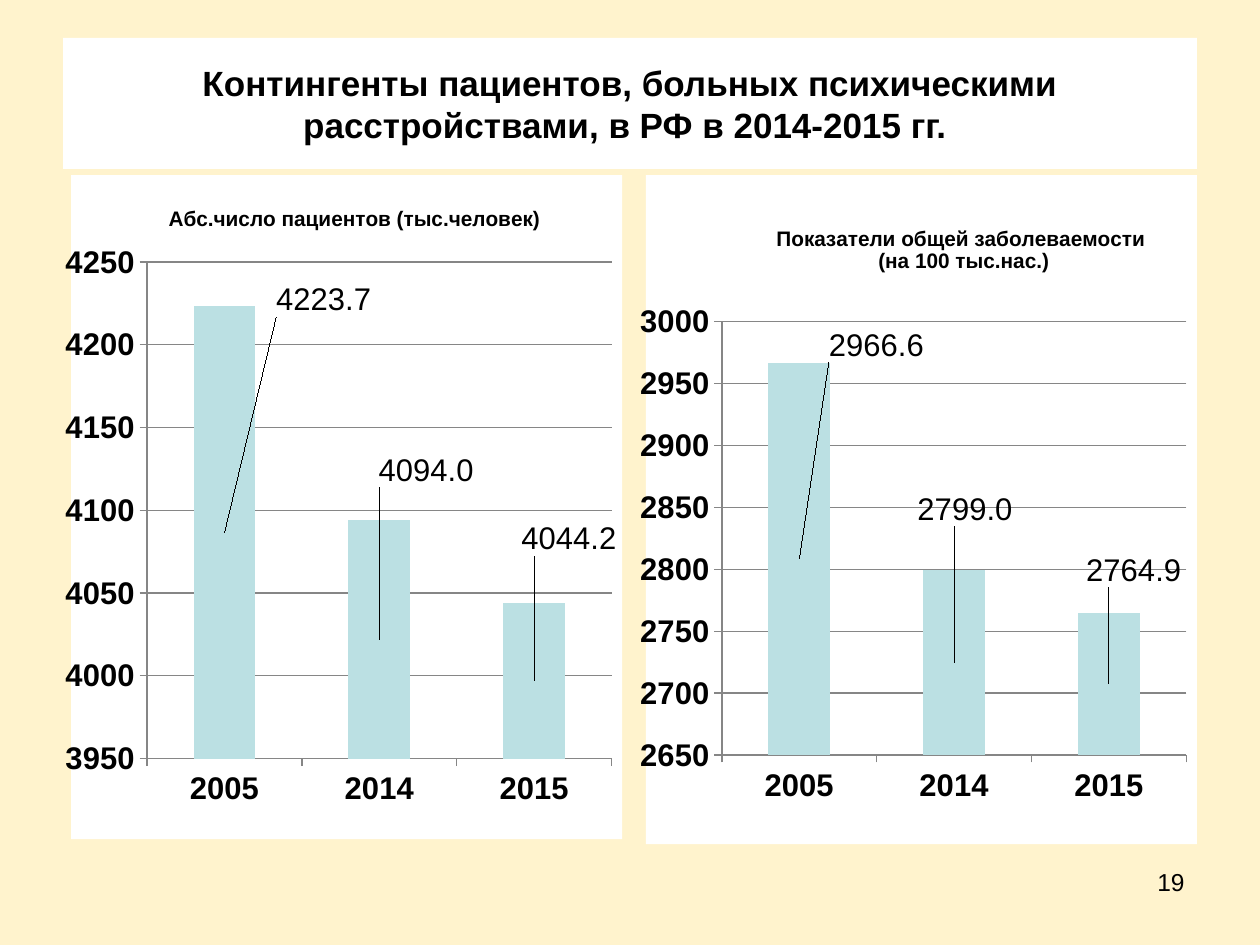
import pptx
import pptx.chart.data
import pptx.dml.color
import pptx.enum.chart
import pptx.enum.text
import pptx.oxml
import pptx.oxml.ns
import pptx.util

Pt = pptx.util.Pt
CREAM = pptx.dml.color.RGBColor(0xFF, 0xF3, 0xCD)
WHITE = pptx.dml.color.RGBColor(0xFF, 0xFF, 0xFF)
BLACK = pptx.dml.color.RGBColor(0x00, 0x00, 0x00)
AQUA = pptx.dml.color.RGBColor(0xBB, 0xE0, 0xE3)
GRAY = pptx.dml.color.RGBColor(0x86, 0x86, 0x86)
CHART_NS = pptx.oxml.ns.nsdecls("c")


def style(font, size, bold=False):
    font.name = "Arial"
    font.size = Pt(size)
    font.bold = bold
    font.color.rgb = BLACK


def set_layout(parent, index, settings):
    for old in parent.xpath("c:layout"):
        parent.remove(old)
    items = "".join(f'<c:{tag} val="{value}"/>' for tag, value in settings.items())
    parent.insert(index, pptx.oxml.parse_xml(
        f"<c:layout {CHART_NS}><c:manualLayout>{items}</c:manualLayout></c:layout>"))


prs = pptx.Presentation()
prs.slide_width, prs.slide_height = Pt(720), Pt(540)
slide = prs.slides.add_slide(prs.slide_layouts[5])
slide.background.fill.solid()
slide.background.fill.fore_color.rgb = CREAM

title = slide.shapes.title
title.left, title.top, title.width, title.height = Pt(36), Pt(21.6), Pt(648), Pt(74.9)
title.fill.solid()
title.fill.fore_color.rgb = WHITE
title.text_frame.vertical_anchor = pptx.enum.text.MSO_ANCHOR.MIDDLE
title.text_frame.auto_size = pptx.enum.text.MSO_AUTO_SIZE.NONE
heading = title.text_frame.paragraphs[0]
heading.alignment = pptx.enum.text.PP_ALIGN.CENTER
heading.space_before = Pt(4)
run = heading.add_run()
run.text = "Контингенты пациентов, больных психическими расстройствами, в РФ в 2014-2015 гг. "
style(run.font, 20, True)

page_number = slide.shapes.add_textbox(Pt(516.2), Pt(491.8), Pt(167.8), Pt(37.4))
page_number.text_frame.word_wrap = True
number_line = page_number.text_frame.paragraphs[0]
number_line.alignment = pptx.enum.text.PP_ALIGN.RIGHT
run = number_line.add_run()
run.text = "19"
style(run.font, 14)

panels = [
    dict(left=37.4, height=379.4, name="Абс.число пациентов (тыс.человек)",
         heading=["Абс.число пациентов (тыс.человек)"], heading_at=(0.17, 0.04),
         values=(4223.7, 4094.0, 4044.2), scale=(3950, 4250), plot=(0.131, 0.748),
         offsets=[(0.18, -0.35), (0.085, -0.255), (0.063, -0.214)]),
    dict(left=365.8, height=382.3, name="Series 1",
         heading=["Показатели общей заболеваемости ", "(на 100 тыс.нас.)"],
         heading_at=(0.23, 0.07),
         values=(2966.6, 2799.0, 2764.9), scale=(2650, 3000), plot=(0.219, 0.648),
         offsets=[(0.14, -0.32), (0.02, -0.23), (0.045, -0.17)]),
]

for panel in panels:
    data = pptx.chart.data.CategoryChartData(number_format="0.0")
    data.categories = ["2005", "2014", "2015"]
    data.add_series(panel["name"], panel["values"])
    chart = slide.shapes.add_chart(
        pptx.enum.chart.XL_CHART_TYPE.COLUMN_STACKED, Pt(panel["left"]), Pt(100.1),
        Pt(318.2), Pt(panel["height"]), data).chart
    style(chart.font, 17.9)
    chart.has_legend = False
    chart._chartSpace.chart.addnext(pptx.oxml.parse_xml(
        f'<c:spPr {pptx.oxml.ns.nsdecls("c", "a")}><a:solidFill>'
        f'<a:srgbClr val="{WHITE}"/></a:solidFill><a:ln><a:noFill/></a:ln></c:spPr>'))

    chart.has_title = True
    caption = chart.chart_title.text_frame
    for index, text in enumerate(panel["heading"]):
        line = caption.add_paragraph() if index else caption.paragraphs[0]
        run = line.add_run()
        run.text = text
        style(run.font, 12, True)
    x, y = panel["heading_at"]
    set_layout(chart.chart_title._element, 1, dict(xMode="edge", yMode="edge", x=x, y=y))
    y, h = panel["plot"]
    set_layout(chart._chartSpace.chart.plotArea, 0, dict(
        layoutTarget="inner", xMode="edge", yMode="edge", x=0.138, y=y, w=0.843, h=h))

    for axis in (chart.category_axis, chart.value_axis):
        style(axis.tick_labels.font, 17.9, True)
        axis.major_tick_mark = pptx.enum.chart.XL_TICK_MARK.OUTSIDE
        axis.minor_tick_mark = pptx.enum.chart.XL_TICK_MARK.NONE
        axis.format.line.color.rgb = GRAY
        axis.format.line.width = Pt(0.75)
    scale = chart.value_axis
    scale.minimum_scale, scale.maximum_scale = panel["scale"]
    scale.major_unit = 50
    scale.has_major_gridlines = True
    scale.major_gridlines.format.line.color.rgb = GRAY
    scale.major_gridlines.format.line.width = Pt(0.75)
    scale.tick_labels.number_format = "0"
    scale.tick_labels.number_format_is_linked = False

    plot = chart.plots[0]
    plot.gap_width, plot.overlap = 150, 100
    plot.vary_by_categories = False
    bars = plot.series[0]
    bars.format.fill.solid()
    bars.format.fill.fore_color.rgb = AQUA
    for index in range(len(panel["offsets"])):
        label = bars.points[index].data_label
        label.position = pptx.enum.chart.XL_LABEL_POSITION.CENTER
        style(label.font, 17.9)
    for element, (x, y) in zip(bars._element.xpath("c:dLbls/c:dLbl"), panel["offsets"]):
        element.insert(1, pptx.oxml.parse_xml(
            f'<c:numFmt {CHART_NS} formatCode="0.0" sourceLinked="0"/>'))
        set_layout(element, 1, dict(x=x, y=y))

prs.save("out.pptx")
